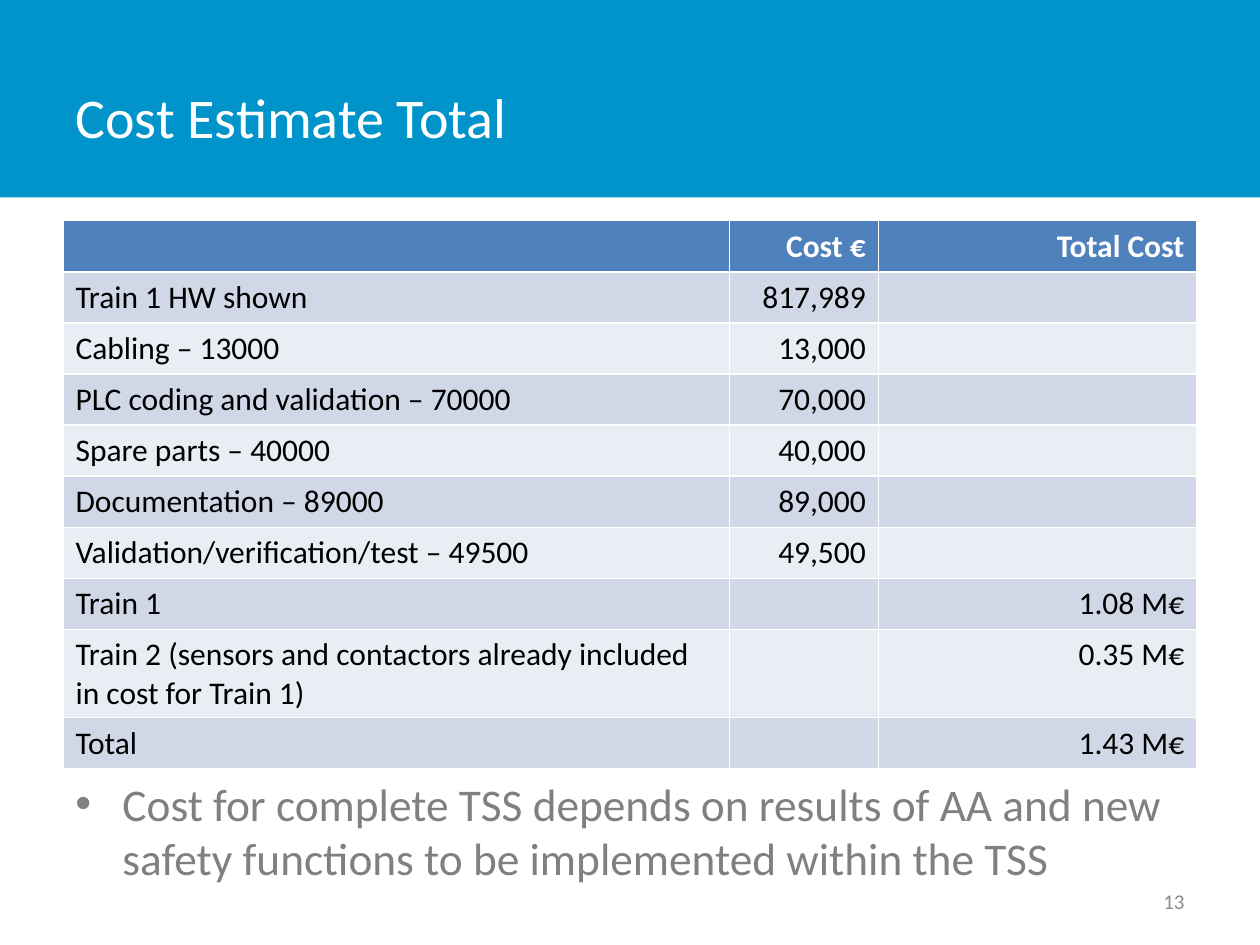
"""Build the cost estimate slide with its table and closing remark."""
from lxml import etree
from pptx import Presentation
from pptx.dml.color import RGBColor
from pptx.enum.shapes import MSO_SHAPE
from pptx.enum.text import MSO_ANCHOR, PP_ALIGN
from pptx.oxml.ns import qn
from pptx.util import Cm, Pt

RECTANGLE = MSO_SHAPE.RECTANGLE
TOP, MIDDLE = MSO_ANCHOR.TOP, MSO_ANCHOR.MIDDLE
LEFT, RIGHT = PP_ALIGN.LEFT, PP_ALIGN.RIGHT
ROW_HEIGHT = 1.03
COLUMN_WIDTHS = (13.44, 3, 6.42)
ROWS = (
    ("", "Cost €", "Total Cost"),
    ("Train 1 HW shown", "817,989", ""),
    ("Cabling – 13000", "13,000", ""),
    ("PLC coding and validation – 70000", "70,000", ""),
    ("Spare parts – 40000", "40,000", ""),
    ("Documentation – 89000", "89,000", ""),
    ("Validation/verification/test – 49500", "49,500", ""),
    ("Train 1", "", "1.08 M€"),
    ("Train 2 (sensors and contactors already included in cost for Train 1)", "", "0.35 M€"),
    ("Total", "", "1.43 M€"),
)


def color(value):
    return RGBColor.from_string(value)


def write(frame, text, size=18, fill="000000", bold=False, align=LEFT, anchor=TOP, bullet=None):
    frame.word_wrap = True
    frame.vertical_anchor = anchor
    paragraph = frame.paragraphs[0]
    paragraph.alignment = align
    if bullet:
        properties = paragraph._p.get_or_add_pPr()
        properties.set("marL", str(Cm(0.95)))
        properties.set("indent", str(Cm(-0.95)))
        etree.SubElement(properties, qn("a:buFont")).set("typeface", "Arial")
        etree.SubElement(properties, qn("a:buChar")).set("char", bullet)
    paragraph.font.size = Pt(size)
    if text:
        run = paragraph.add_run()
        run.text = text
        run.font.size = Pt(size)
        run.font.name = "Calibri"
        run.font.bold = bold
        run.font.color.rgb = color(fill)


presentation = Presentation()
presentation.slide_width, presentation.slide_height = Cm(25.4), Cm(19.05)
slide = presentation.slides.add_slide(presentation.slide_layouts[6])

banner = slide.shapes.add_shape(RECTANGLE, 0, 0, Cm(25.4), Cm(3.98))
banner.shadow.inherit = False
banner.fill.solid()
banner.fill.fore_color.rgb = color("0094CA")
banner.line.fill.background()

title = slide.shapes.add_textbox(Cm(1.27), Cm(0.76), Cm(19.84), Cm(3.18))
write(title.text_frame, "Cost Estimate Total", size=32, fill="FFFFFF", anchor=MIDDLE)

table = slide.shapes.add_table(
    len(ROWS), len(COLUMN_WIDTHS), Cm(1.27), Cm(4.45),
    Cm(sum(COLUMN_WIDTHS)), Cm(ROW_HEIGHT * len(ROWS)),
).table
for column, width in zip(table.columns, COLUMN_WIDTHS):
    column.width = Cm(width)
for row_index, values in enumerate(ROWS):
    table.rows[row_index].height = Cm(ROW_HEIGHT)
    header = row_index == 0
    band = "4F81BD" if header else ("E9EDF4", "D0D8E8")[row_index % 2]
    for column_index, value in enumerate(values):
        cell = table.cell(row_index, column_index)
        cell.fill.solid()
        cell.fill.fore_color.rgb = color(band)
        write(cell.text_frame, value, bold=header, fill="FFFFFF" if header else "000000",
              align=RIGHT if column_index else LEFT)

remark = slide.shapes.add_textbox(Cm(1.27), Cm(15.52), Cm(22.86), Cm(3.2))
write(remark.text_frame,
      "Cost for complete TSS depends on results of AA and new safety functions "
      "to be implemented within the TSS",
      size=25.9, fill="808080", bullet="•")

page_number = slide.shapes.add_textbox(Cm(18.21), Cm(17.65), Cm(5.92), Cm(1.02))
write(page_number.text_frame, "13", size=12, fill="8C8C8C", align=RIGHT, anchor=MIDDLE)

presentation.save("out.pptx")
